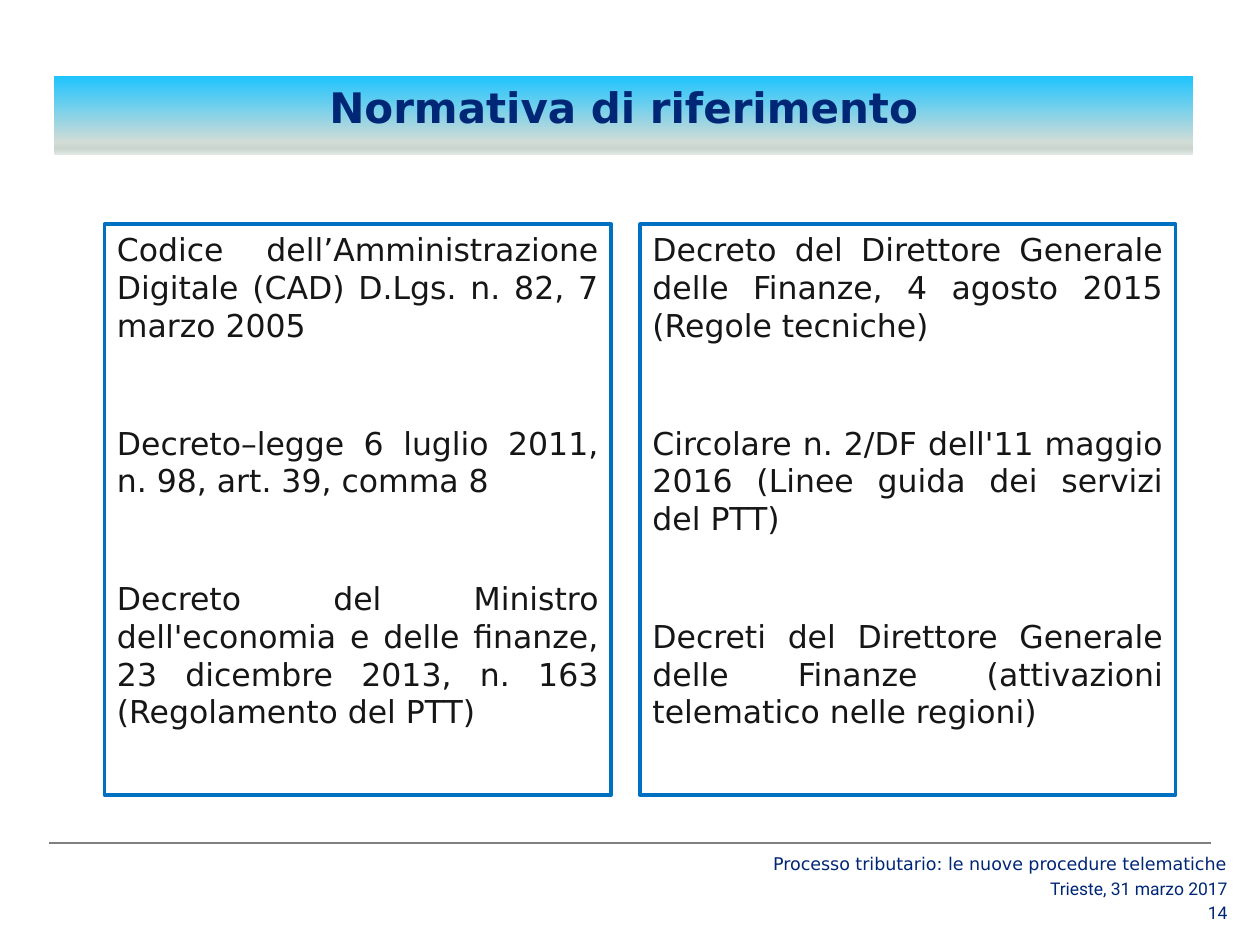
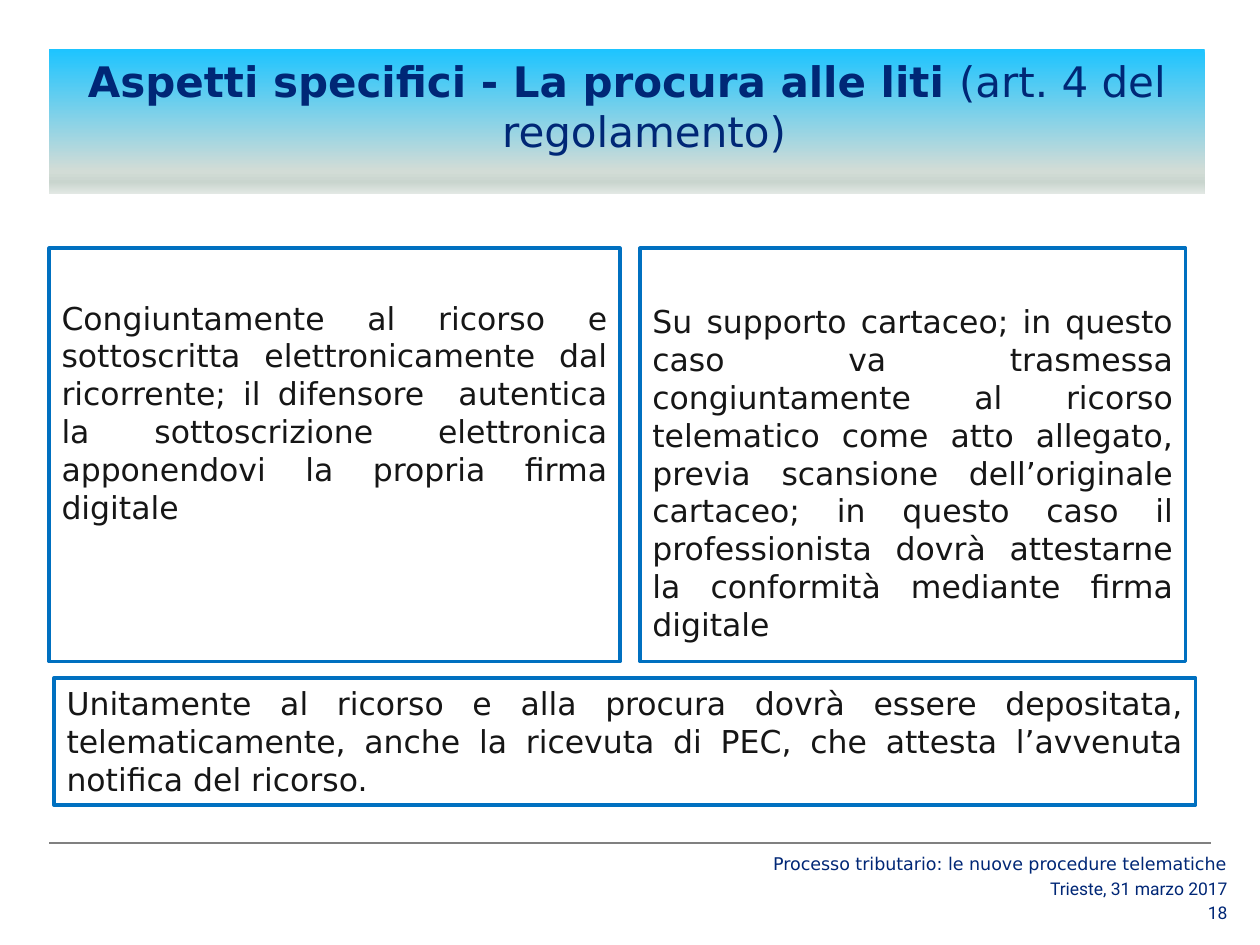
from lxml.etree import SubElement
from pptx import Presentation
from pptx.dml.color import RGBColor
from pptx.enum.shapes import MSO_CONNECTOR, MSO_SHAPE
from pptx.enum.text import MSO_ANCHOR, MSO_AUTO_SIZE, PP_ALIGN
from pptx.oxml.ns import qn
from pptx.util import Inches, Pt

COLORS = {
    "navy": "002776",
    "ink": "161616",
    "frame": "0070C0",
    "rule": "808080",
    "white": "FFFFFF",
}
BAND_STOPS = [(0, "1DC4FF"), (84, "D2DCD6"), (92, "C9D5CE"), (100, "E2E8E4")]
MAIN_FONT = "DejaVu Sans"
SMALL_FONT = "Roboto"
COURSE = "Processo tributario: le nuove procedure telematiche"
PLACE_AND_DATE = "Trieste, 31 marzo 2017"
LINE_HEIGHT = 1.2
TITLE_INDENT = 0.38


def color(name):
    """Return the named colour of the deck."""
    return RGBColor.from_string(COLORS[name])


def place(shape, left, top, width, height):
    """Move and size a shape, in inches."""
    shape.left, shape.top = Inches(left), Inches(top)
    shape.width, shape.height = Inches(width), Inches(height)


def add_span(para, text, size=18, font=MAIN_FONT, tint="ink", bold=False):
    """Add one formatted run to a paragraph."""
    span = para.add_run()
    span.text = text
    span.font.size = Pt(size)
    span.font.name = font
    span.font.bold = bold
    span.font.color.rgb = color(tint)


def fill_band(shape):
    """Give a shape the vertical gradient of the title band."""
    shape.fill.gradient()
    shape.fill.gradient_angle = 270
    stops = shape._element.spPr.find(qn("a:gradFill")).find(qn("a:gsLst"))
    for stop in list(stops):
        stops.remove(stop)
    for percent, value in BAND_STOPS:
        stop = SubElement(stops, qn("a:gs"), pos=str(percent * 1000))
        SubElement(stop, qn("a:srgbClr"), val=value)


def format_title(page, bounds, bold_text, plain_text=""):
    """Turn the title placeholder into the gradient band."""
    title = page.shapes.title
    place(title, *bounds)
    fill_band(title)
    frame = title.text_frame
    frame.auto_size = MSO_AUTO_SIZE.NONE
    frame.vertical_anchor = MSO_ANCHOR.TOP
    para = frame.paragraphs[0]
    para.alignment = PP_ALIGN.CENTER
    para.line_spacing = Pt(24 * LINE_HEIGHT)
    properties = para._p.get_or_add_pPr()
    properties.set("marL", str(Inches(TITLE_INDENT)))
    properties.set("indent", str(-Inches(TITLE_INDENT)))
    add_span(para, bold_text, size=24, tint="navy", bold=True)
    if plain_text:
        add_span(para, plain_text, size=24, tint="navy")


def add_framed_text(page, bounds, texts, inset_top=0.05, gap=0):
    """Add a white box with a blue frame and justified paragraphs."""
    box = page.shapes.add_shape(MSO_SHAPE.RECTANGLE, *map(Inches, bounds))
    box.shadow.inherit = False
    box.fill.solid()
    box.fill.fore_color.rgb = color("white")
    box.line.color.rgb = color("frame")
    box.line.width = Pt(2)
    frame = box.text_frame
    frame.word_wrap = True
    frame.vertical_anchor = MSO_ANCHOR.TOP
    frame.margin_top = Inches(inset_top)
    for index, text in enumerate(texts):
        para = frame.add_paragraph() if index else frame.paragraphs[0]
        para.alignment = PP_ALIGN.JUSTIFY
        para.line_spacing = Pt(18 * LINE_HEIGHT)
        para.space_before = Pt(gap if index else 0)
        add_span(para, text)


def add_footer_line(page, bounds, text, font=SMALL_FONT):
    """Add one right-aligned line of the footer."""
    box = page.shapes.add_textbox(*map(Inches, bounds))
    frame = box.text_frame
    frame.word_wrap = True
    frame.vertical_anchor = MSO_ANCHOR.MIDDLE
    frame.margin_top = frame.margin_bottom = 0
    para = frame.paragraphs[0]
    para.alignment = PP_ALIGN.RIGHT
    add_span(para, text, size=10, font=font, tint="navy")


def add_footer(page, number):
    """Add the rule, course, date and page number."""
    rule = page.shapes.add_connector(
        MSO_CONNECTOR.STRAIGHT, *map(Inches, (0.39, 6.69, 9.61, 6.69))
    )
    rule.line.color.rgb = color("rule")
    rule.line.width = Pt(0.75)
    SubElement(rule._element.spPr, qn("a:effectLst"))
    add_footer_line(page, (5.94, 6.75, 3.89, 0.2), COURSE, font=MAIN_FONT)
    add_footer_line(page, (6.73, 6.97, 3.11, 0.16), PLACE_AND_DATE)
    add_footer_line(page, (6.73, 7.16, 3.11, 0.16), str(number))


def add_page(deck, number):
    """Add a title-only slide with the footer."""
    page = deck.slides.add_slide(deck.slide_layouts[5])
    add_footer(page, number)
    return page


def build_references(deck):
    """Build the slide that lists the legal references."""
    page = add_page(deck, 14)
    format_title(page, (0.43, 0.6, 9.04, 0.63), "Normativa di riferimento")
    laws = [
        "Codice dell’Amministrazione Digitale (CAD) D.Lgs. n. 82, 7 marzo 2005",
        "Decreto–legge 6 luglio 2011, n. 98, art. 39, comma 8",
        "Decreto del Ministro dell'economia e delle finanze, "
        "23 dicembre 2013, n. 163 (Regolamento del PTT)",
    ]
    decrees = [
        "Decreto del Direttore Generale delle Finanze, "
        "4 agosto 2015 (Regole tecniche)",
        "Circolare n. 2/DF dell'11 maggio 2016 (Linee guida dei servizi del PTT)",
        "Decreti del Direttore Generale delle Finanze "
        "(attivazioni telematico nelle regioni)",
    ]
    add_framed_text(page, (0.83, 1.78, 4.02, 4.53), laws, gap=45.6)
    add_framed_text(page, (5.08, 1.78, 4.25, 4.53), decrees, gap=45.6)


def build_power_of_attorney(deck):
    """Build the slide on the power of attorney."""
    page = add_page(deck, 18)
    format_title(
        page,
        (0.39, 0.39, 9.17, 1.15),
        "Aspetti specifici - La procura alle liti ",
        "(art. 4 del regolamento) ",
    )
    electronic = (
        "Congiuntamente al ricorso e sottoscritta elettronicamente dal "
        "ricorrente; il difensore  autentica la sottoscrizione elettronica "
        "apponendovi la propria firma digitale"
    )
    on_paper = (
        "Su supporto cartaceo; in questo caso va trasmessa congiuntamente al "
        "ricorso telematico come atto allegato, previa scansione "
        "dell’originale cartaceo; in questo caso il professionista dovrà "
        "attestarne la conformità mediante firma digitale"
    )
    receipt = (
        "Unitamente al ricorso e alla procura dovrà essere depositata, "
        "telematicamente, anche la ricevuta di PEC, che attesta l’avvenuta "
        "notifica del ricorso."
    )
    add_framed_text(page, (0.39, 1.97, 4.53, 3.28), [electronic], inset_top=0.4)
    add_framed_text(page, (5.08, 1.97, 4.33, 3.28), [on_paper], inset_top=0.43)
    add_framed_text(page, (0.43, 5.38, 9.06, 1.01), [receipt])


def main():
    """Build and save the deck."""
    deck = Presentation()
    deck.slide_width, deck.slide_height = Inches(10), Inches(7.5)
    build_references(deck)
    build_power_of_attorney(deck)
    deck.save("out.pptx")


if __name__ == "__main__":
    main()
